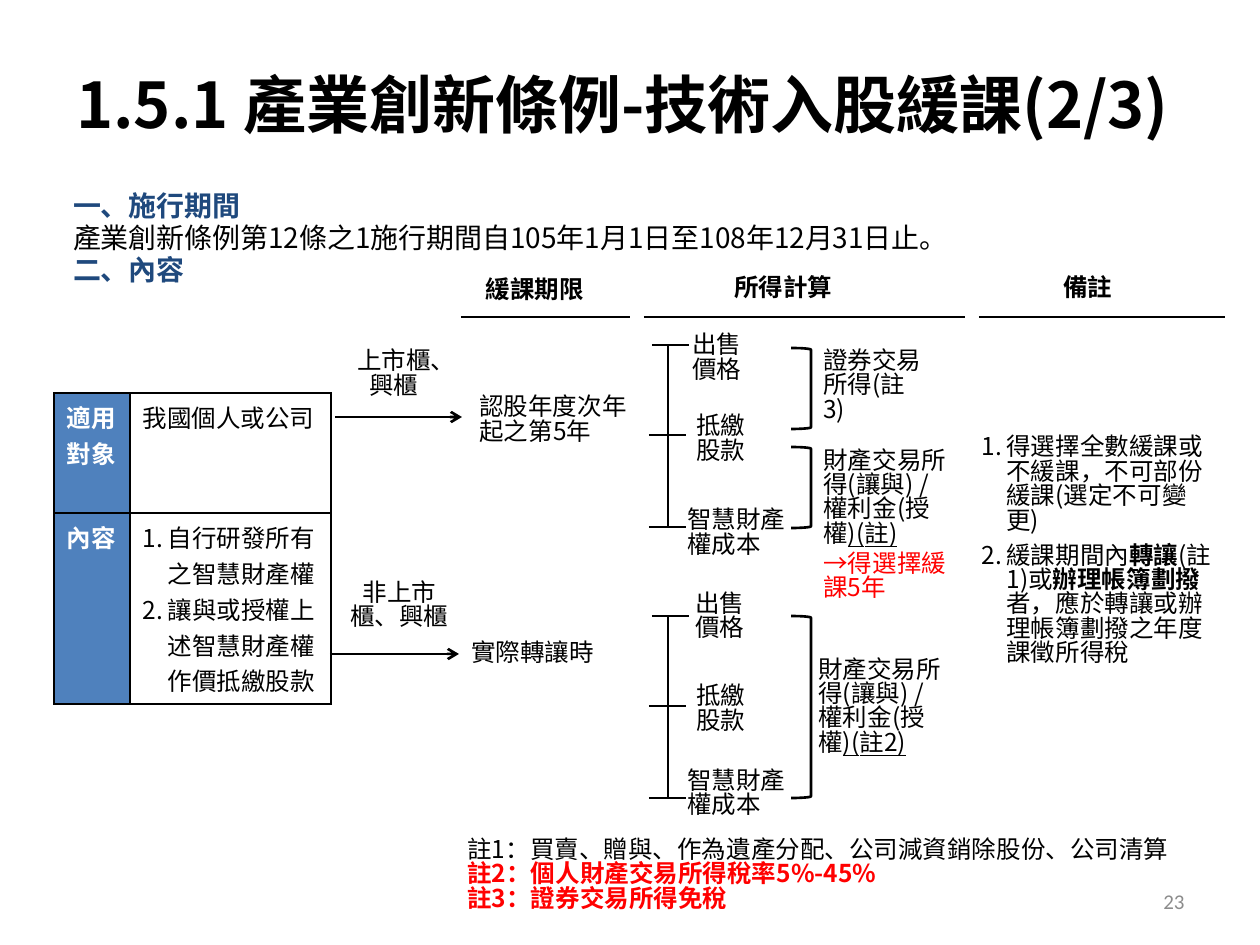
from pptx import Presentation
from pptx.dml.color import RGBColor
from pptx.enum.shapes import MSO_CONNECTOR as Connector, MSO_SHAPE as Shape
from pptx.enum.text import MSO_ANCHOR as Anchor, PP_ALIGN as Align
from pptx.oxml.ns import qn
from pptx.util import Pt
from lxml.etree import SubElement as Sub

SCALE = 914400 / 126
FONT = "Noto Sans CJK SC"
COLORS = {
    "black": "000000",
    "white": "FFFFFF",
    "navy": "1F497D",
    "blue": "4F81BD",
    "red": "FF0000",
    "gray": "8C8C8C",
}


def px(length):
    return round(length * SCALE)


def rgb(name):
    return RGBColor.from_string(COLORS[name])


def write_text(frame, paragraphs, size=14, color="black", bold=False, font=FONT,
               align=Align.LEFT, spacing=0.83, gap=0, numbered=False):
    frame.word_wrap = True
    for index, pieces in enumerate(paragraphs):
        line = frame.add_paragraph() if index else frame.paragraphs[0]
        line.alignment = align
        line.line_spacing = spacing
        if gap and index < len(paragraphs) - 1:
            line.space_after = Pt(gap)
        props = line._p.get_or_add_pPr()
        props.set("hangingPunct", "1")
        if numbered:
            props.set("marL", str(px(25)))
            props.set("indent", str(px(-25)))
            Sub(props, qn("a:buFont"), typeface=FONT)
            Sub(props, qn("a:buAutoNum"), type="arabicPeriod")
        for piece in [pieces] if isinstance(pieces, str) else pieces:
            words, style = (piece, {}) if isinstance(piece, str) else piece
            run = line.add_run()
            run.text = words
            run.font.size = Pt(size)
            run.font.name = font
            run.font.bold = style.get("bold", bold)
            run.font.underline = style.get("underline", False)
            run.font.color.rgb = rgb(style.get("color", color))
            Sub(run._r.get_or_add_rPr(), qn("a:ea"), typeface=font)


def add_text(slide, left, top, width, height, paragraphs, anchor=Anchor.MIDDLE,
             inset=None, **style):
    box = slide.shapes.add_textbox(px(left), px(top), px(width), px(height))
    box.text_frame.vertical_anchor = anchor
    if inset is not None:
        box.text_frame.margin_left = px(inset)
    write_text(box.text_frame, paragraphs, **style)
    return box


def add_line(slide, x1, y1, x2, y2, arrow=False):
    line = slide.shapes.add_connector(Connector.STRAIGHT, px(x1), px(y1), px(x2), px(y2))
    line.line.width = Pt(1.5)
    line.line.color.rgb = rgb("black")
    if arrow:
        Sub(line.line._get_or_add_ln(), qn("a:tailEnd"), type="arrow")
    Sub(line._element.spPr, qn("a:effectLst"))
    return line


def add_bracket(slide, top, height):
    bracket = slide.shapes.add_shape(Shape.RIGHT_BRACKET, px(791), px(top), px(20), px(height))
    bracket.shadow.inherit = False
    bracket.fill.background()
    bracket.line.color.rgb = rgb("black")
    bracket.line.width = Pt(1.5)


def add_borders(cell):
    props = cell._tc.get_or_add_tcPr()
    for index, side in enumerate(("lnL", "lnR", "lnT", "lnB")):
        edge = Sub(props, qn("a:" + side), w=str(Pt(1)))
        Sub(Sub(edge, qn("a:solidFill")), qn("a:srgbClr"), val=COLORS["black"])
        props.insert(index, edge)


def add_scope_table(slide):
    rows = [
        (["適用", "對象"], ["我國個人或公司"], 120),
        (["內容"], ["自行研發所有之智慧財產權", "讓與或授權上述智慧財產權作價抵繳股款"], 191),
    ]
    table = slide.shapes.add_table(2, 2, px(54), px(393), px(277), px(311)).table
    table.first_row = table.horz_banding = False
    table.columns[0].width, table.columns[1].width = px(76), px(201)
    for index, (heading, details, height) in enumerate(rows):
        table.rows[index].height = px(height)
        head, body = table.cell(index, 0), table.cell(index, 1)
        body.margin_right = px(5)
        for cell, color in ((head, "blue"), (body, "white")):
            cell.fill.solid()
            cell.fill.fore_color.rgb = rgb(color)
            add_borders(cell)
        write_text(head.text_frame, heading, color="white", bold=True, spacing=1.0)
        write_text(body.text_frame, details, spacing=1.0, numbered=len(details) > 1)


def add_price_ladder(slide, top, sale, paid, cost):
    add_line(slide, 668, top, 668, top + 181)
    for left, drop in ((652, 0), (649, 90), (649, 182)):
        add_line(slide, left, top + drop, left + 37, top + drop)
    add_text(slide, *sale, 88, 49, ["出售", "價格"])
    add_text(slide, 684, paid, 84, 49, ["抵繳", "股款"])
    add_text(slide, 675, cost, 134, 49, ["智慧財產", "權成本"])


def add_column_heads(slide):
    for title, left, top, width, align, start, end in (
        ("緩課期限", 423, 267, 224, Align.CENTER, 461, 630),
        ("所得計算", 722, 265, 139, Align.LEFT, 644, 965),
        ("備註", 1051, 265, 139, Align.LEFT, 979, 1225),
    ):
        add_text(slide, left, top, width, 49, [title], bold=True, align=align)
        add_line(slide, start, 317, end, 317)


def add_deferral(slide):
    add_text(slide, 335, 350, 118, 49, ["上市櫃、興櫃"], align=Align.CENTER)
    add_text(slide, 325, 582, 149, 49, ["非上市", "櫃、興櫃"], align=Align.CENTER)
    add_text(slide, 467, 396, 180, 49, ["認股年度次年起之第5年"])
    transfer = add_text(slide, 459, 630, 267, 48, ["實際轉讓時"])
    add_line(slide, 335, 417, 462, 417, arrow=True)
    add_line(slide, 330, 654, 459, 654, arrow=True).end_connect(transfer, 1)


def add_income(slide):
    add_price_ladder(slide, 345, (680, 334), 415, 509)
    add_price_ladder(slide, 616, (683, 593), 685, 770)
    for top, height in ((348, 81), (447, 81), (616, 182)):
        add_bracket(slide, top, height)
    property_income = "財產交易所得(讓與) / 權利金(授權"
    underlined = {"underline": True}
    add_text(slide, 811, 362, 124, 49, ["證券交易所得(註3)"])
    add_text(slide, 811, 501, 159, 49, [
        [property_income, (")(註)", underlined)],
        [("→得選擇緩課5年", {"color": "red"})],
    ], gap=3)
    add_text(slide, 806, 683, 159, 49, [[property_income, (")(註2)", underlined)]])


def add_notes(slide):
    strong = {"bold": True}
    add_text(slide, 969, 344, 261, 415, [
        "得選擇全數緩課或不緩課，不可部份緩課(選定不可變更)",
        ["緩課期間內", ("轉讓", strong), "(註1)或", ("辦理帳簿劃撥", strong),
         "者，應於轉讓或辦理帳簿劃撥之年度課徵所得稅"],
    ], gap=6, numbered=True)
    warning = {"bold": True, "color": "red"}
    add_text(slide, 455, 842, 774, 67, [
        "註1：買賣、贈與、作為遺產分配、公司減資銷除股份、公司清算",
        [("註2：個人財產交易所得稅率5%-45%", warning)],
        [("註3：證券交易所得免稅", warning)],
    ])


def main():
    deck = Presentation()
    deck.slide_width, deck.slide_height = px(1260), px(945)
    slide = deck.slides.add_slide(deck.slide_layouts[6])
    add_text(slide, 64, 45, 1134, 129, ["1.5.1 產業創新條例-技術入股緩課(2/3)"],
             size=36, bold=True)
    heading = {"bold": True, "color": "navy"}
    add_text(slide, 73, 185, 1142, 639, [
        [("一、施行期間", heading)],
        "產業創新條例第12條之1施行期間自105年1月1日至108年12月31日止。",
        [("二、內容", heading)],
    ], anchor=Anchor.TOP, inset=0, size=16, spacing=0.95)
    add_scope_table(slide)
    add_column_heads(slide)
    add_deferral(slide)
    add_income(slide)
    add_notes(slide)
    add_text(slide, 903, 876, 294, 50, ["23"], size=12, color="gray", font="Calibri",
             align=Align.RIGHT, spacing=1.0)
    deck.save("out.pptx")


if __name__ == "__main__":
    main()
